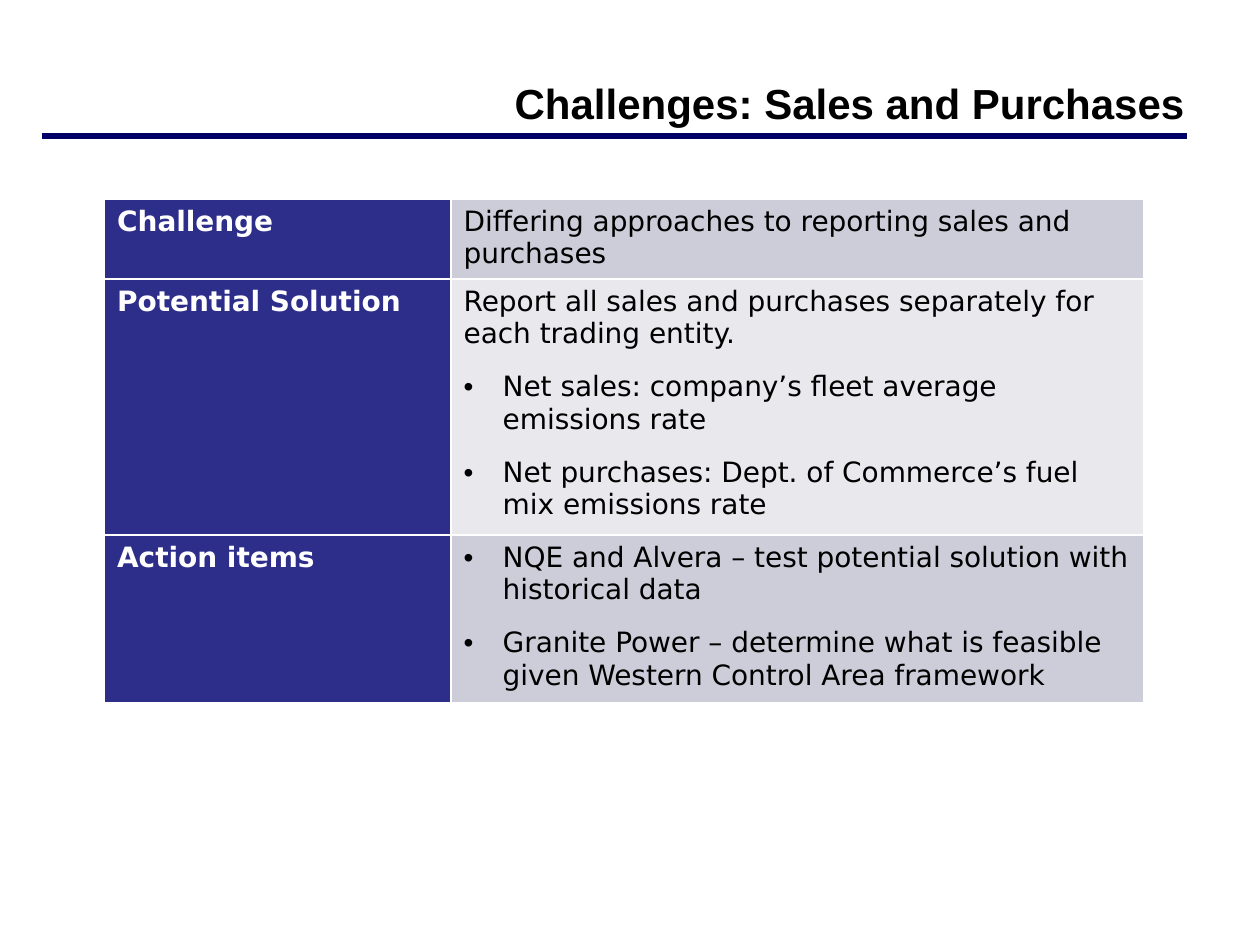
from dataclasses import dataclass

from lxml import etree
from pptx import Presentation
from pptx.dml.color import RGBColor
from pptx.enum.shapes import MSO_CONNECTOR
from pptx.enum.text import MSO_ANCHOR, PP_ALIGN
from pptx.oxml.ns import qn
from pptx.util import Inches, Pt

STRAIGHT = MSO_CONNECTOR.STRAIGHT
MIDDLE = MSO_ANCHOR.MIDDLE
RIGHT = PP_ALIGN.RIGHT


@dataclass(frozen=True)
class Theme:
    rule: str = "000066"
    label: str = "2D2D8A"
    bands: tuple = ("CDCDDA", "E8E8ED")
    ink: str = "000000"
    white: str = "FFFFFF"
    head: str = "Arial"
    body: str = "DejaVu Sans"
    large: int = 24
    small: int = 16


THEME = Theme()
BULLET = "•"
ROWS = [
    ("Challenge", ["Differing approaches to reporting sales and purchases"]),
    ("Potential Solution", [
        "Report all sales and purchases separately for each trading entity.",
        BULLET + "Net sales: company’s fleet average emissions rate",
        BULLET + "Net purchases: Dept. of Commerce’s fuel mix emissions rate",
    ]),
    ("Action items", [
        BULLET + "NQE and Alvera – test potential solution with historical data",
        BULLET + "Granite Power – determine what is feasible given Western Control Area framework",
    ]),
]


def style(font, color, **values):
    for name, value in values.items():
        setattr(font, name, value)
    font.color.rgb = RGBColor.from_string(color)


def add_rule(slide):
    y = Inches(1.08)
    rule = slide.shapes.add_connector(STRAIGHT, Inches(0.33), y, Inches(9.42), y)
    rule.line.color.rgb = RGBColor.from_string(THEME.rule)
    rule.line.width = Pt(3)
    etree.SubElement(rule._element.spPr, qn("a:effectLst"))


def add_title(slide, text):
    box = slide.shapes.add_textbox(Inches(2.67), Inches(0.55), Inches(6.83), Inches(0.53))
    frame = box.text_frame
    frame.word_wrap = True
    frame.vertical_anchor = MIDDLE
    para = frame.paragraphs[0]
    para.text = text
    para.alignment = RIGHT
    style(para.font, THEME.ink, name=THEME.head, size=Pt(THEME.large), bold=True)


def add_bullet(para):
    props = para._p.get_or_add_pPr()
    indent = Inches(0.31)
    props.set("marL", str(indent))
    props.set("indent", str(-indent))
    etree.SubElement(props, qn("a:buFont"), typeface="Arial")
    etree.SubElement(props, qn("a:buChar"), char=BULLET)


def add_border(cell):
    props = cell._tc.get_or_add_tcPr()
    for i, side in enumerate(("lnL", "lnR", "lnT", "lnB")):
        line = etree.Element(qn("a:" + side), w=str(Pt(1)))
        fill = etree.SubElement(line, qn("a:solidFill"))
        etree.SubElement(fill, qn("a:srgbClr"), val=THEME.white)
        props.insert(i, line)


def fill_cell(cell, lines, back, color, bold):
    cell.fill.solid()
    cell.fill.fore_color.rgb = RGBColor.from_string(back)
    add_border(cell)
    frame = cell.text_frame
    for i, line in enumerate(lines):
        para = frame.add_paragraph() if i else frame.paragraphs[0]
        para.text = line.removeprefix(BULLET)
        if i:
            para.space_before = Pt(12)
        if line.startswith(BULLET):
            add_bullet(para)
        style(para.font, color, name=THEME.body, size=Pt(THEME.small), bold=bold)


def add_grid(slide):
    high = Inches(0.41)
    shape = slide.shapes.add_table(
        len(ROWS), 2, Inches(0.83), Inches(1.58), Inches(8.25), high * len(ROWS))
    table = shape.table
    table.first_row = table.horz_banding = False
    for col, width in zip(table.columns, (2.75, 5.5)):
        col.width = Inches(width)
    for i, (label, lines) in enumerate(ROWS):
        table.rows[i].height = high
        fill_cell(table.cell(i, 0), [label], THEME.label, THEME.white, True)
        fill_cell(table.cell(i, 1), lines, THEME.bands[i % 2], THEME.ink, False)


def main():
    deck = Presentation()
    deck.slide_width, deck.slide_height = Inches(10), Inches(7.5)
    slide = deck.slides.add_slide(deck.slide_layouts[6])
    add_rule(slide)
    add_title(slide, "Challenges: Sales and Purchases")
    add_grid(slide)
    deck.save("out.pptx")


if __name__ == "__main__":
    main()
